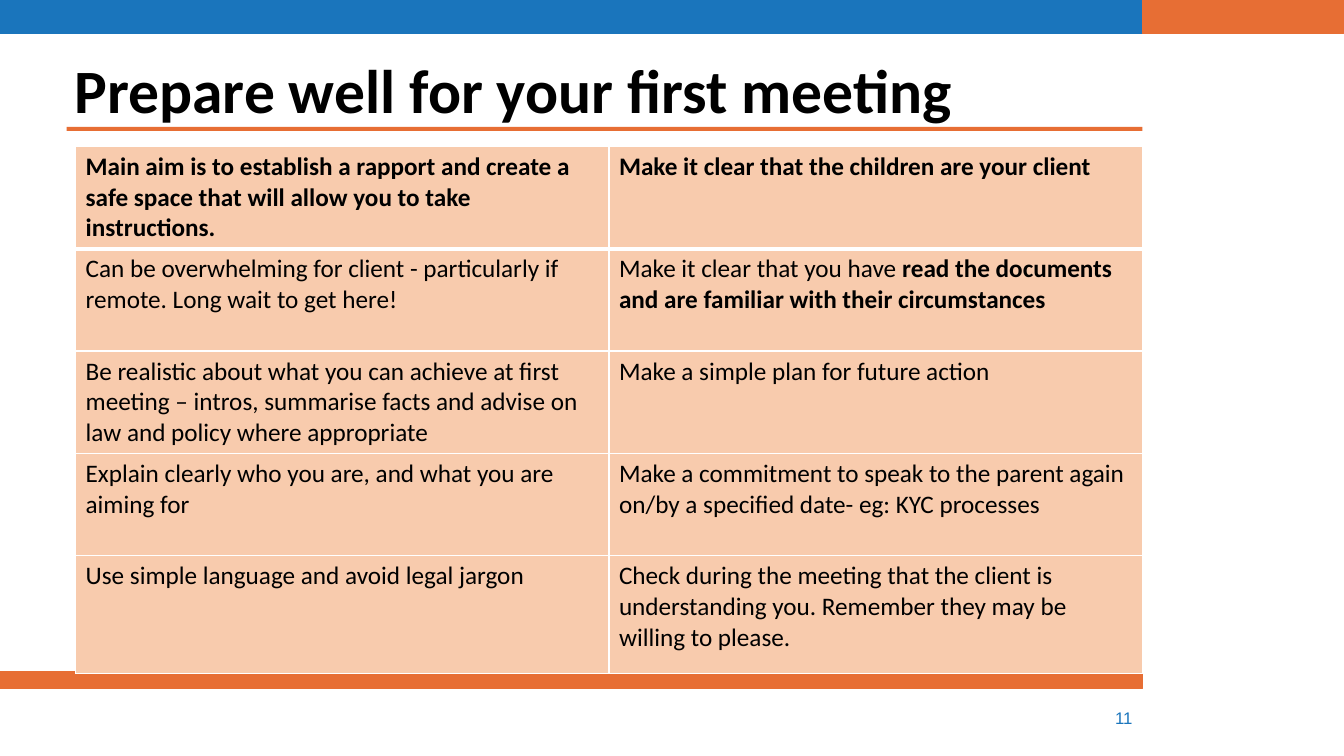
from dataclasses import dataclass

from lxml.etree import SubElement as Sub
from pptx import Presentation
from pptx.dml.color import RGBColor as RGB
from pptx.enum.shapes import MSO_SHAPE as Shape
from pptx.enum.text import MSO_ANCHOR as Anchor, PP_ALIGN as Align
from pptx.oxml.ns import qn
from pptx.util import Pt


@dataclass(frozen=True)
class Theme:
    blue: str = "1A75BC"
    orange: str = "E76E34"
    peach: str = "F8CBAD"
    black: str = "000000"
    white: str = "FFFFFF"
    body: str = "Calibri"
    plain: str = "Arial"
    head: int = 44
    cell: int = 18
    note: int = 12


THEME = Theme()

BARS = [
    (0, 0, 816, 24, THEME.blue, True),
    (0, 480, 816, 12, THEME.orange, True),
    (816, 0, 144, 24, THEME.orange, True),
    (47.5, 90.7, 768.5, 2.9, THEME.orange, False),
]

# Each cell is a list of (text, bold) runs.
ROWS = [
    ([("Main aim is to establish a rapport and create a safe space that will "
       "allow you to take instructions.", True)],
     [("Make it clear that the children are your client", True)]),
    ([("Can be overwhelming for client - particularly if remote. "
       "Long wait to get here!", False)],
     [("Make it clear that you have ", False),
      ("read the documents and are familiar with their circumstances", True)]),
    ([("Be realistic about what you can achieve at first meeting – intros, "
       "summarise facts and advise on law and policy where appropriate", False)],
     [("Make a simple plan for future action", False)]),
    ([("Explain clearly who you are, and what you are aiming for", False)],
     [("Make a commitment to speak to the parent again on/by a specified date- "
       "eg: KYC processes", False)]),
    ([("Use simple language and avoid legal jargon", False)],
     [("Check during the meeting that the client is understanding you. "
       "Remember they may be willing to please.", False)]),
]
HEIGHTS = [73.1] * 4 + [84.2]


def write(frame, runs, size=THEME.cell, font=THEME.body, color=THEME.black,
          align=Align.LEFT, space=1.0):
    """Fill the first paragraph of a frame with (text, bold) runs."""
    para = frame.paragraphs[0]
    para.alignment = align
    para.line_spacing = space
    for text, bold in runs:
        run = para.add_run()
        run.text = text
        run.font.size = Pt(size)
        run.font.name = font
        run.font.bold = bold
        run.font.color.rgb = RGB.from_string(color)


def add_bar(slide, x, y, w, h, color, edge):
    bar = slide.shapes.add_shape(Shape.RECTANGLE, Pt(x), Pt(y), Pt(w), Pt(h))
    bar.shadow.inherit = False
    bar.fill.solid()
    bar.fill.fore_color.rgb = RGB.from_string(color)
    if edge:
        bar.line.color.rgb = RGB.from_string(color)
        bar.line.width = Pt(0.75)
    else:
        bar.line.fill.background()


def add_label(slide, x, y, w, h, runs, pad=(7.2, 3.6), **style):
    frame = slide.shapes.add_textbox(Pt(x), Pt(y), Pt(w), Pt(h)).text_frame
    frame.word_wrap = True
    frame.vertical_anchor = Anchor.MIDDLE
    frame.margin_left = frame.margin_right = Pt(pad[0])
    frame.margin_top = frame.margin_bottom = Pt(pad[1])
    write(frame, runs, **style)


def set_edges(cell, top, bottom):
    """Draw white borders; they must come before the cell's fill."""
    props = cell._tc.get_or_add_tcPr()
    for side, width in (("L", 1), ("R", 1), ("T", top), ("B", bottom)):
        line = Sub(props, qn(f"a:ln{side}"), w=str(Pt(width)))
        fill = Sub(line, qn("a:solidFill"))
        Sub(fill, qn("a:srgbClr"), val=THEME.white)


def add_grid(slide, x, y, w, rows, heights):
    cols = len(rows[0])
    table = slide.shapes.add_table(len(rows), cols, Pt(x), Pt(y), Pt(w),
                                   Pt(sum(heights))).table
    for i, (row, height) in enumerate(zip(rows, heights)):
        table.rows[i].height = Pt(height)
        for j, runs in enumerate(row):
            cell = table.cell(i, j)
            set_edges(cell, top=3 if i == 1 else 1, bottom=3 if i == 0 else 1)
            cell.fill.solid()
            cell.fill.fore_color.rgb = RGB.from_string(THEME.peach)
            write(cell.text_frame, runs)


def main():
    deck = Presentation()
    deck.slide_width, deck.slide_height = Pt(960), Pt(540)
    slide = deck.slides.add_slide(deck.slide_layouts[6])
    for bar in BARS:
        add_bar(slide, *bar)
    add_label(slide, 676.8, 501.8, 139.2, 21.6, [("11", False)],
              size=THEME.note, font=THEME.plain, color=THEME.blue,
              align=Align.RIGHT)
    add_label(slide, 48.2, 41, 662.4, 51.1,
              [("Prepare well for your first meeting", True)],
              pad=(5, 2.9), size=THEME.head, space=0.9)
    add_grid(slide, 54, 104.6, 762, ROWS, HEIGHTS)
    deck.save("out.pptx")


if __name__ == "__main__":
    main()
